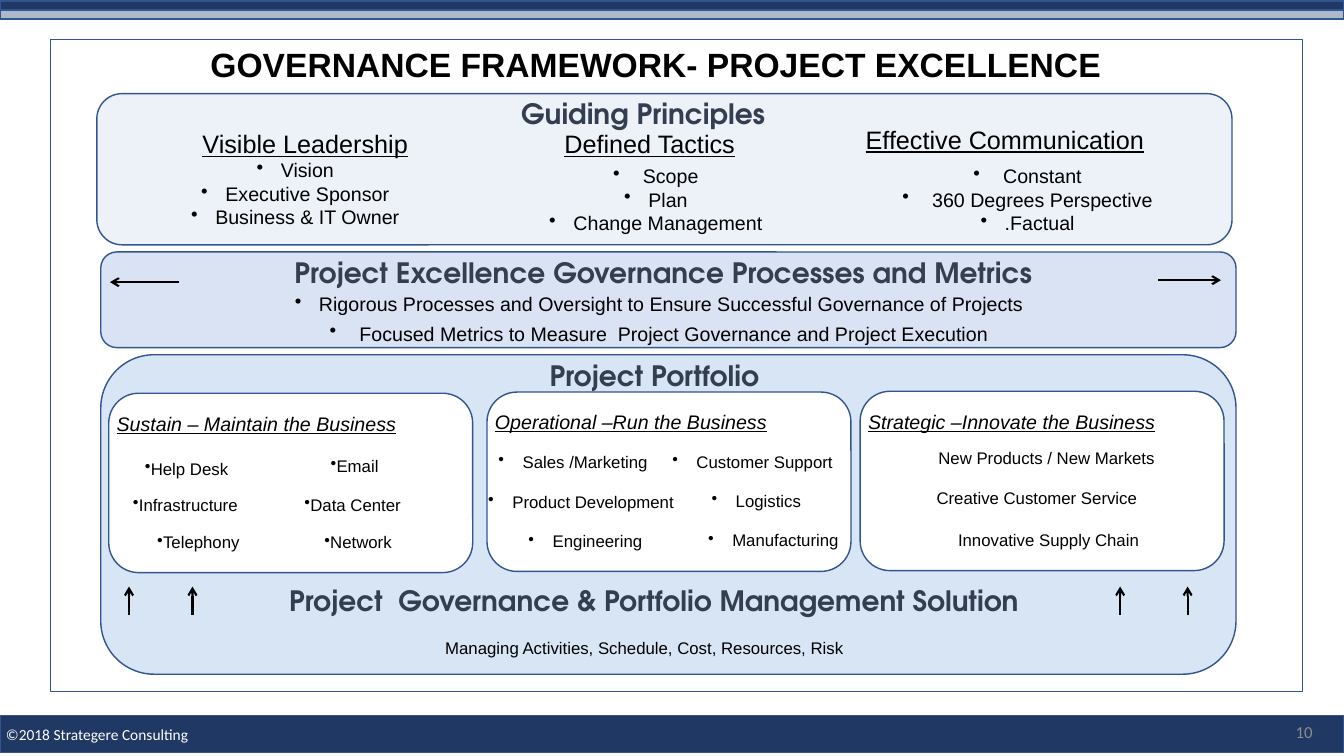
from dataclasses import dataclass
from pptx import Presentation
from pptx import util as u
from pptx.dml import color
from pptx.enum import shapes, text
from pptx.oxml import ns, xmlchemy

INCH = 2.54
LEFT, MID, RIGHT = text.PP_ALIGN.LEFT, text.PP_ALIGN.CENTER, text.PP_ALIGN.RIGHT
RECT = shapes.MSO_SHAPE.RECTANGLE
ROUND = shapes.MSO_SHAPE.ROUNDED_RECTANGLE


@dataclass(frozen=True)
class Theme:
    # Colours
    edge: str = "325491"
    navy: str = "203864"
    steel: str = "ADB9CA"
    pale: str = "EDF2F9"
    lilac: str = "DAE3F3"
    sky: str = "D7E5F5"
    white: str = "FFFFFF"
    black: str = "000000"
    slate: str = "333F50"
    grey: str = "8C8C8C"
    # Type
    body: str = "Arial"
    head: str = "TeX Gyre Adventor"
    foot: str = "Calibri"
    title: int = 24
    band: int = 20
    group: int = 18
    list: int = 14
    item: int = 12
    note: int = 11


T = Theme()


def cm(size):
    return u.Cm(round(size * INCH, 2))


def rgb(code):
    return color.RGBColor.from_string(code)


def panel(slide, kind, at, fill=None):
    box = slide.shapes.add_shape(kind, *map(cm, at))
    box.shadow.inherit = False
    if fill:
        box.fill.solid()
        box.fill.fore_color.rgb = rgb(fill)
    else:
        box.fill.background()
    box.line.color.rgb = rgb(T.edge)
    box.line.width = u.Pt(1)


def bullet(para, hang):
    props = para._p.get_or_add_pPr()
    props.set("marL", str(cm(hang)))
    props.set("indent", str(-cm(hang)))
    mark = xmlchemy.OxmlElement("a:buChar")
    mark.set("char", "•")
    props.append(mark)


def label(slide, at, lines, size, align=LEFT, face=T.body, ink=T.black,
          bold=False, slant=False, under=False, hang=None):
    box = slide.shapes.add_textbox(*map(cm, at))
    frame = box.text_frame
    frame.word_wrap = True
    frame.text = lines
    if hang:
        frame.margin_left, frame.margin_right = 0, cm(0.17)
    for para in frame.paragraphs:
        para.alignment = align
        if hang is not None:
            bullet(para, hang)
        for run in para.runs:
            font = run.font
            font.name, font.size = face, u.Pt(size)
            font.color.rgb = rgb(ink)
            font.bold, font.italic, font.underline = bold, slant, under
    return frame


def banner(slide, at, words, align=MID):
    label(slide, at, words, T.band, align, T.head, T.slate, bold=True)


def points(slide, at, lines, size):
    label(slide, at, lines, size, MID, hang=0.24)


def arrow(slide, x, y, dx, dy):
    ends = map(cm, (x, y, x + dx, y + dy))
    line = slide.shapes.add_connector(shapes.MSO_CONNECTOR.STRAIGHT, *ends)
    line.line.color.rgb = rgb(T.black)
    line.line.width = u.Pt(1.5)
    tip = xmlchemy.OxmlElement("a:tailEnd")
    tip.set("type", "arrow")
    line._element.spPr.find(ns.qn("a:ln")).append(tip)
    line._element.spPr.append(xmlchemy.OxmlElement("a:effectLst"))


def guide(slide):
    panel(slide, ROUND, (0.96, 0.93, 11.26, 1.5), T.pale)
    banner(slide, (5.07, 0.91, 3.29, 0.47), "Guiding Principles", LEFT)
    heads = [
        (1.91, 1.23, 2.75, "Visible Leadership"),
        (5.5, 1.23, 2.32, "Defined Tactics"),
        (8.49, 1.18, 3.64, "Effective Communication"),
    ]
    for x, y, w, words in heads:
        label(slide, (x, y, w, 0.44), words, T.group, under=True)
    lists = [
        (1.58, 1.52, 2.87, "Vision\nExecutive Sponsor\nBusiness & IT Owner"),
        (5.02, 1.58, 3.14, " Scope\nPlan\nChange Management"),
        (8.64, 1.58, 3.27, " Constant\n 360 Degrees Perspective\n.Factual"),
    ]
    for x, y, w, lines in lists:
        points(slide, (x, y, w, 0.88), lines, T.list)


def process(slide):
    panel(slide, ROUND, (1, 2.5, 11.26, 0.95), T.lilac)
    banner(slide, (1.13, 2.49, 10.9, 0.47),
           "Project Excellence Governance Processes and Metrics")
    points(slide, (1.3, 2.85, 10.65, 0.37), "Rigorous Processes and Oversight to "
           "Ensure Successful Governance of Projects", T.list)
    points(slide, (1.3, 3.14, 10.65, 0.37), " Focused Metrics to Measure  "
           "Project Governance and Project Execution", T.list)
    arrow(slide, 1.77, 2.8, -0.68, 0)
    arrow(slide, 11.49, 2.78, 0.62, 0)


def folio(slide):
    panel(slide, ROUND, (1, 3.52, 11.26, 3.17), T.sky)
    banner(slide, (4.54, 3.51, 3.98, 0.47), "Project Portfolio ")
    # Three cards
    cards = [
        (1.08, 3.9, 4.04, "Sustain – Maintain the Business"),
        (4.83, 3.89, 4.02, "Operational –Run the Business"),
        (8.53, 3.88, 4.02, "Strategic –Innovate the Business"),
    ]
    for x, y, top, words in cards:
        panel(slide, ROUND, (x, y, 3.61, 1.78), T.white)
        label(slide, (x - 0.02, top, 3.64, 0.37), words, T.list,
              slant=True, under=True)
    # Sustain
    for x, y, w, words in [
        (1.34, 4.5, 1.26, "Help Desk"), (3.18, 4.47, 0.83, "Email"),
        (1.22, 4.86, 1.52, "Infrastructure"), (2.92, 4.86, 1.42, "Data Center"),
        (1.46, 5.23, 1.25, "Telephony"), (3.12, 5.23, 1.07, "Network"),
    ]:
        label(slide, (x, y, w, 0.33), words, T.item, hang=0)
    # Operational
    for x, y, w, words in [
        (4.82, 4.43, 1.9, "Sales /Marketing"), (6.56, 4.43, 1.98, "Customer Support"),
        (4.71, 4.83, 2.28, "Product Development"), (7.03, 4.82, 1.11, "Logistics"),
        (5.16, 5.22, 1.46, "Engineering"), (6.92, 5.21, 1.67, "Manufacturing"),
    ]:
        points(slide, (x, y, w, 0.33), words, T.item)
    # Strategic
    for x, y, w, words in [
        (8.94, 4.39, 2.88, "New Products / New Markets"),
        (8.94, 4.79, 2.69, "Creative Customer Service"),
        (9.18, 5.21, 2.44, "Innovative Supply Chain"),
    ]:
        label(slide, (x, y, w, 0.33), words, T.item, MID)
    # Base of the portfolio
    banner(slide, (1.12, 5.74, 10.74, 0.47),
           "Project  Governance & Portfolio Management Solution")
    label(slide, (3.67, 6.28, 5.45, 0.33),
          "Managing Activities, Schedule, Cost, Resources, Risk", T.item, MID)
    for x in (1.28, 1.91, 11.11, 11.78):
        arrow(slide, x, 6.1, 0, -0.28)


def trim(slide):
    panel(slide, RECT, (0, 0.01, 13.33, 0.09), T.navy)
    panel(slide, RECT, (0, 0.1, 13.33, 0.09), T.steel)
    panel(slide, RECT, (0, 7.1, 13.33, 0.37), T.navy)
    label(slide, (-0.04, 7.14, 2.03, 0.29), "©2018 Strategere Consulting",
          T.note, face=T.foot, ink=T.white)
    page = label(slide, (10.12, 7.06, 3, 0.4), "10", T.item, RIGHT, T.foot, T.grey)
    page.vertical_anchor = text.MSO_ANCHOR.MIDDLE


def main():
    deck = Presentation()
    deck.slide_width, deck.slide_height = cm(13.33), cm(7.5)
    slide = deck.slides.add_slide(deck.slide_layouts[6])
    # Frame and title
    panel(slide, RECT, (0.5, 0.39, 12.42, 6.47))
    label(slide, (0.7, 0.39, 11.7, 0.55), "GOVERNANCE FRAMEWORK- PROJECT EXCELLENCE ",
          T.title, MID, bold=True)
    # Bands from top to bottom
    guide(slide)
    process(slide)
    folio(slide)
    trim(slide)
    deck.save("out.pptx")


if __name__ == "__main__":
    main()
